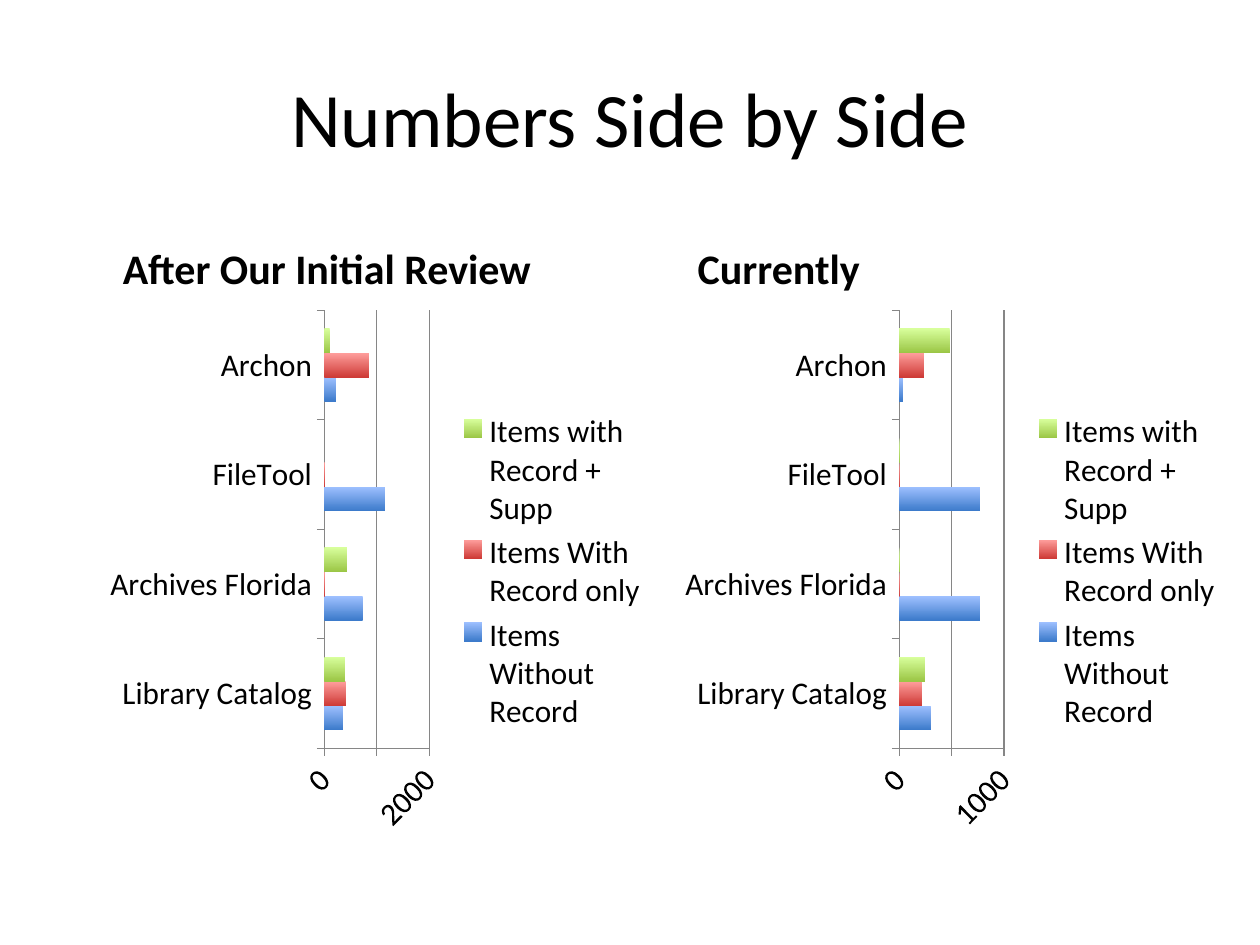
from pptx import Presentation
from pptx.chart import data
from pptx.dml.color import RGBColor
from pptx.enum import chart as charts, text
from pptx.util import Pt

BLACK, GREY = "000000", "868686"
CATEGORIES = ["Library Catalog", "Archives Florida", "FileTool", "Archon"]
# Series name with the top and bottom colour of its bars
SERIES = [
    ("Items Without Record", "9EC0FF", "3D7BCB"),
    ("Items With Record only ", "FF9F9D", "CE3B37"),
    ("Items with Record + Supp", "D8FF9C", "9BC646"),
]
# Heading, left edge, axis maximum, one row of values per series
PANELS = [
    ("After Our Initial Review", 63.1, 2000,
     [(360, 730, 1160, 220), (410, 20, 20, 860), (400, 430, 0, 100)]),
    ("Currently", 391.6, 1000,
     [(300, 770, 770, 40), (220, 0, 0, 240), (250, 0, 0, 480)]),
]
PANEL_WIDTH = 318.25


def rgb(value):
    return RGBColor.from_string(value)


class Deck:
    """Holds the text style and the slide being filled."""

    def __init__(self, slide, font="Calibri", color=BLACK):
        self.s, self.font, self.color = slide, font, color

    def style(self, font, **values):
        for key, value in {"name": self.font, **values}.items():
            setattr(font, key, value)
        font.color.rgb = rgb(self.color)

    def label(self, wording, box, anchor, align, **values):
        tf = self.s.shapes.add_textbox(*map(Pt, box)).text_frame
        tf.word_wrap = True
        tf.vertical_anchor = anchor
        p = tf.paragraphs[0]
        p.alignment = align
        r = p.add_run()
        r.text = wording
        self.style(r.font, **values)

    def keep_on_one_line(self, axis):
        """Stop tick labels from wrapping: only unrotated labels wrap."""
        self.style(axis.tick_labels.font, size=Pt(18))
        axis._element.txPr.bodyPr.set("rot", "1")

    def bar_chart(self, rows, box, maximum):
        cd = data.CategoryChartData()
        cd.categories = CATEGORIES
        for (name, _, _), values in zip(SERIES, rows):
            cd.add_series(name, values)
        chart = self.s.shapes.add_chart(
            charts.XL_CHART_TYPE.BAR_CLUSTERED, *map(Pt, box), cd).chart
        self.style(chart.font, size=Pt(18))
        chart.has_title = False
        chart.has_legend = True
        chart.legend.position = charts.XL_LEGEND_POSITION.RIGHT
        chart.legend.include_in_layout = False

        plot = chart.plots[0]
        plot.gap_width, plot.overlap = 150, 0
        plot.vary_by_categories = False
        for series, (_, top, bottom) in zip(plot.series, SERIES):
            fill = series.format.fill
            fill.gradient()
            fill.gradient_angle = 270
            for stop, color in zip(fill.gradient_stops, (top, bottom)):
                stop.color.rgb = rgb(color)

        axis = chart.value_axis
        limits = {"minimum_scale": 0, "maximum_scale": maximum,
                  "major_unit": maximum / 2, "has_major_gridlines": True}
        for key, value in limits.items():
            setattr(axis, key, value)
        chart.category_axis.has_major_gridlines = False
        self.keep_on_one_line(chart.category_axis)
        for part in (axis, chart.category_axis, axis.major_gridlines):
            part.format.line.color.rgb = rgb(GREY)
            part.format.line.width = Pt(0.75)
        for part in (axis, chart.category_axis):
            part.major_tick_mark = charts.XL_TICK_MARK.OUTSIDE


def main():
    prs = Presentation()
    prs.slide_width, prs.slide_height = Pt(720), Pt(540)
    deck = Deck(prs.slides.add_slide(prs.slide_layouts[6]))
    deck.label("Numbers Side by Side", (36, 21.6, 648, 90),
               text.MSO_ANCHOR.MIDDLE, text.PP_ALIGN.CENTER, size=Pt(44))
    for heading, left, maximum, rows in PANELS:
        deck.label(heading, (left, 120.7, PANEL_WIDTH, 50.4),
                   text.MSO_ANCHOR.BOTTOM, text.PP_ALIGN.LEFT,
                   size=Pt(24), bold=True)
        deck.bar_chart(rows, (left, 171.1, PANEL_WIDTH, 311), maximum)
    prs.save("out.pptx")


if __name__ == "__main__":
    main()
